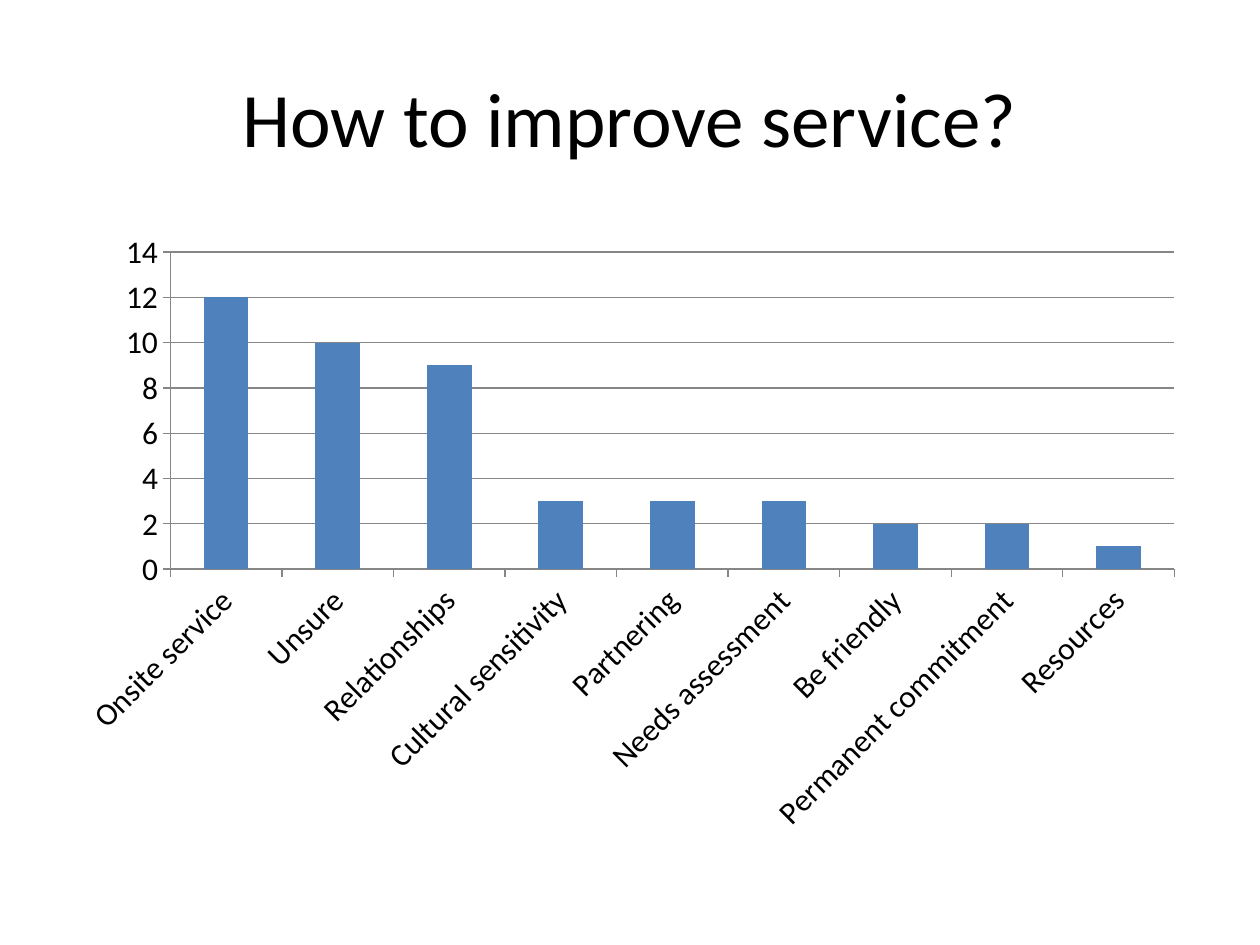
from pptx import Presentation
from pptx.chart.data import CategoryChartData
from pptx.dml.color import RGBColor
from pptx.enum.chart import XL_CHART_TYPE, XL_TICK_MARK
from pptx.enum.text import MSO_ANCHOR, PP_ALIGN
from pptx.util import Pt

COLUMN = XL_CHART_TYPE.COLUMN_CLUSTERED
OUTSIDE, NO_TICK = XL_TICK_MARK.OUTSIDE, XL_TICK_MARK.NONE
MIDDLE, CENTER = MSO_ANCHOR.MIDDLE, PP_ALIGN.CENTER

BLACK = RGBColor(0x00, 0x00, 0x00)
BLUE = RGBColor(0x4F, 0x81, 0xBD)
GRAY = RGBColor(0x86, 0x86, 0x86)

TITLE_ONLY = 5
ANSWERS = {
    "Onsite service": 12,
    "Unsure": 10,
    "Relationships": 9,
    "Cultural sensitivity": 3,
    "Partnering": 3,
    "Needs assessment": 3,
    "Be friendly": 2,
    "Permanent commitment": 2,
    "Resources": 1,
}


def apply(obj, values):
    for name, value in values.items():
        setattr(obj, name, value)


class SlideBuilder:
    font_name = "Calibri"

    def __init__(self, slide):
        self.slide = slide

    def style_font(self, font, size):
        apply(font, {"name": self.font_name, "size": Pt(size)})
        font.color.rgb = BLACK

    def style_line(self, line):
        line.width = Pt(0.75)
        line.color.rgb = GRAY

    def title(self, text, left, top, width, height):
        sp = self.slide.shapes.title
        apply(sp, {"left": Pt(left), "top": Pt(top),
                   "width": Pt(width), "height": Pt(height)})
        tf = sp.text_frame
        apply(tf, {"word_wrap": True, "vertical_anchor": MIDDLE})
        p = tf.paragraphs[0]
        p.alignment = CENTER
        r = p.add_run()
        r.text = text
        self.style_font(r.font, 44)

    def column_chart(self, name, values, left, top, width, height):
        data = CategoryChartData()
        data.categories = list(values)
        data.add_series(name, list(values.values()))
        frame = self.slide.shapes.add_chart(
            COLUMN, Pt(left), Pt(top), Pt(width), Pt(height), data)
        chart = frame.chart
        apply(chart, {"has_legend": False, "has_title": False})
        self.style_font(chart.font, 18)

        plot = chart.plots[0]
        apply(plot, {"gap_width": 150, "vary_by_categories": False})
        series = plot.series[0]
        series.invert_if_negative = False
        series.format.fill.solid()
        series.format.fill.fore_color.rgb = BLUE

        for axis in (chart.category_axis, chart.value_axis):
            apply(axis, {"major_tick_mark": OUTSIDE, "minor_tick_mark": NO_TICK})
            self.style_line(axis.format.line)
            self.style_font(axis.tick_labels.font, 18)
        chart.category_axis._element.txPr.bodyPr.set("rot", "-2700000")
        apply(chart.value_axis, {"minimum_scale": 0, "maximum_scale": 14,
                                 "major_unit": 2, "has_major_gridlines": True})
        self.style_line(chart.value_axis.major_gridlines.format.line)


def main():
    prs = Presentation()
    apply(prs, {"slide_width": Pt(720), "slide_height": Pt(540)})
    s = SlideBuilder(prs.slides.add_slide(prs.slide_layouts[TITLE_ONLY]))
    s.title("How to improve service?", 36, 21.6, 648, 90)
    s.column_chart("Series 1", ANSWERS, 36, 126, 648, 356.4)
    prs.save("out.pptx")


if __name__ == "__main__":
    main()
